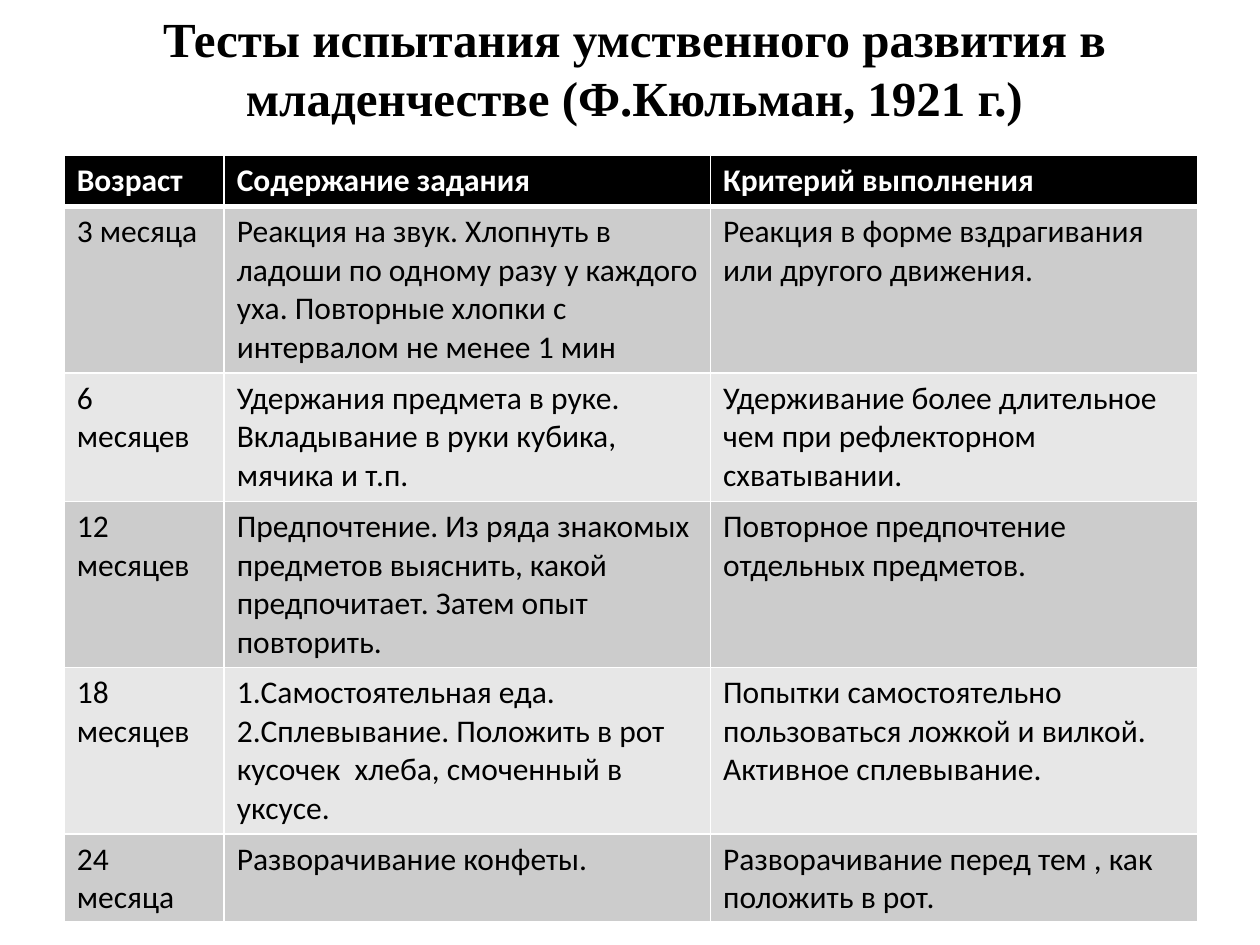
from dataclasses import dataclass

from lxml.etree import SubElement
from pptx import Presentation
from pptx.dml.color import RGBColor
from pptx.enum.text import MSO_ANCHOR, PP_ALIGN
from pptx.oxml.ns import qn
from pptx.util import Inches, Pt


@dataclass(frozen=True)
class Theme:
    ink: str = "000000"
    paper: str = "FFFFFF"
    bands: tuple = ("CCCCCC", "E7E7E7")
    title_font: str = "Times New Roman"
    table_font: str = "Calibri"
    title_size: int = 28
    table_size: int = 18
    thin_border: int = 1
    header_border: int = 3


THEME = Theme()
TITLE = "Тесты испытания умственного развития в младенчестве (Ф.Кюльман, 1921 г.)"
COLUMN_WIDTHS = (1.27, 3.86, 3.87)
ROW_HEIGHTS = (0.41, 1.32, 1.02, 1.32, 1.32, 0.7)
TESTS = (
    ("Возраст", "Содержание задания", "Критерий выполнения"),
    (
        "3 месяца",
        "Реакция на звук. Хлопнуть в ладоши по одному разу у каждого уха. "
        "Повторные хлопки с интервалом не менее 1 мин",
        "Реакция в форме вздрагивания или другого движения.",
    ),
    (
        "6 месяцев",
        "Удержания предмета в руке. Вкладывание в руки кубика, мячика и т.п.",
        "Удерживание более длительное чем при рефлекторном схватывании.",
    ),
    (
        "12 месяцев",
        "Предпочтение. Из ряда знакомых предметов выяснить, какой предпочитает. "
        "Затем опыт повторить.",
        "Повторное предпочтение отдельных предметов.",
    ),
    (
        "18 месяцев",
        "1.Самостоятельная еда. 2.Сплевывание. Положить в рот кусочек  хлеба, "
        "смоченный в уксусе.",
        "Попытки самостоятельно пользоваться ложкой и вилкой.\nАктивное сплевывание.",
    ),
    (
        "24 месяца",
        "Разворачивание конфеты.",
        "Разворачивание перед тем , как положить в рот.",
    ),
)


def write_text(text_frame, text, color, **font_format):
    text_frame.text = text
    for paragraph in text_frame.paragraphs:
        for run in paragraph.runs:
            run.font.color.rgb = RGBColor.from_string(color)
            for name, value in font_format.items():
                setattr(run.font, name, value)


def add_borders(cell, widths):
    properties = cell._tc.get_or_add_tcPr()
    for side, width in widths.items():
        line = SubElement(properties, qn(f"a:ln{side}"), w=str(Pt(width)))
        fill = SubElement(line, qn("a:solidFill"))
        SubElement(fill, qn("a:srgbClr"), val=THEME.paper)


def add_title(slide, left, top, width, height):
    text_frame = slide.shapes.add_textbox(left, top, width, height).text_frame
    text_frame.word_wrap = True
    text_frame.vertical_anchor = MSO_ANCHOR.MIDDLE
    write_text(text_frame, TITLE, THEME.ink, name=THEME.title_font,
               size=Pt(THEME.title_size), bold=True)
    text_frame.paragraphs[0].alignment = PP_ALIGN.CENTER


def add_tests_table(slide, left, top, width, height):
    table = slide.shapes.add_table(
        len(TESTS), len(COLUMN_WIDTHS), left, top, width, height).table
    for column, column_width in zip(table.columns, COLUMN_WIDTHS):
        column.width = Inches(column_width)
    for row_index, (row, row_height) in enumerate(zip(table.rows, ROW_HEIGHTS)):
        row.height = Inches(row_height)
        is_header = row_index == 0
        fill_color = THEME.ink if is_header else THEME.bands[(row_index - 1) % 2]
        borders = dict.fromkeys("LRTB", THEME.thin_border)
        if is_header:
            borders["B"] = THEME.header_border
        elif row_index == 1:
            borders["T"] = THEME.header_border
        for cell, text in zip(row.cells, TESTS[row_index]):
            add_borders(cell, borders)
            cell.fill.solid()
            cell.fill.fore_color.rgb = RGBColor.from_string(fill_color)
            write_text(cell.text_frame, text, THEME.paper if is_header else THEME.ink,
                       name=THEME.table_font, size=Pt(THEME.table_size), bold=is_header)


def main():
    presentation = Presentation()
    presentation.slide_width = Inches(10)
    presentation.slide_height = Inches(7.5)
    slide = presentation.slides.add_slide(presentation.slide_layouts[6])
    add_title(slide, Inches(-0.05), Inches(0), Inches(10.17), Inches(1.07))
    add_tests_table(slide, Inches(0.51), Inches(1.23),
                    Inches(sum(COLUMN_WIDTHS)), Inches(sum(ROW_HEIGHTS)))
    presentation.save("out.pptx")


if __name__ == "__main__":
    main()
